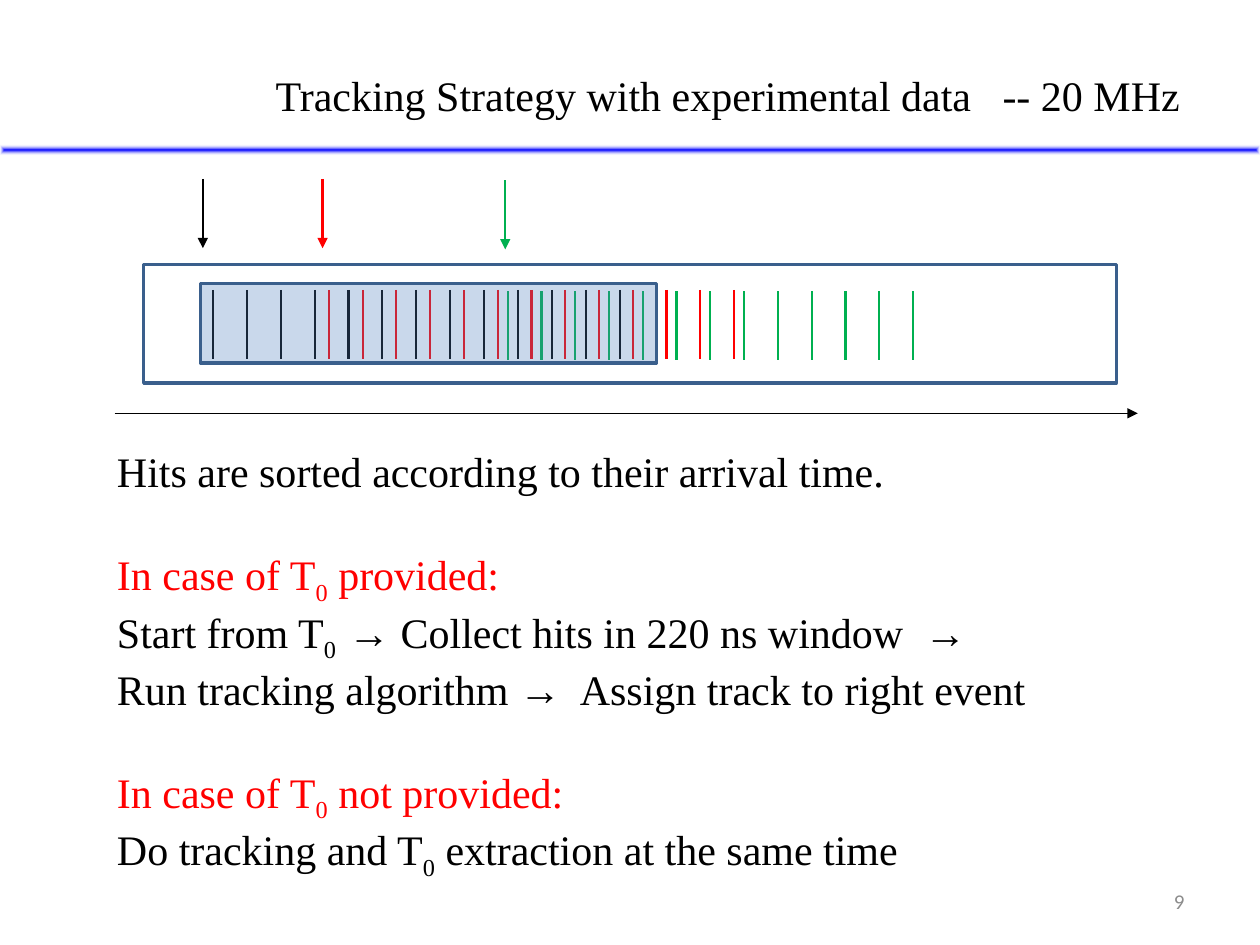
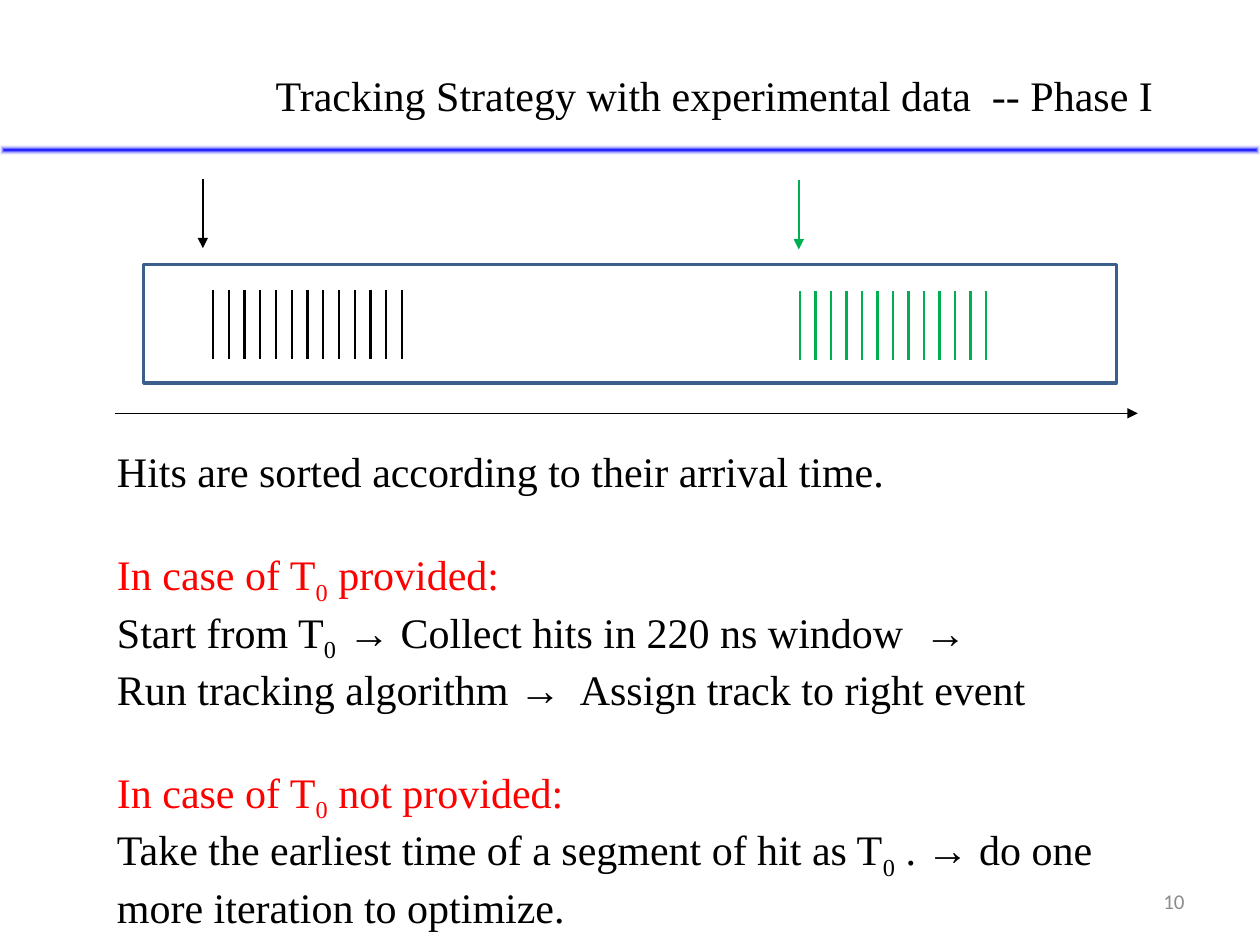
from lxml.etree import SubElement
from pptx import Presentation
from pptx.dml.color import RGBColor
from pptx.enum.shapes import MSO_CONNECTOR, MSO_SHAPE
from pptx.enum.text import MSO_ANCHOR, PP_ALIGN
from pptx.oxml import parse_xml
from pptx.oxml.ns import nsdecls, qn
from pptx.util import Inches, Pt

COLOURS = {
    "black": "000000",
    "red": "FF0000",
    "green": "00B050",
    "frame": "3A5F8C",
    "window": "4F81BD",
    "band": "0000FF",
    "band edge": "FFFFFF",
    "page number": "8C8C8C",
}
SERIF = "Times New Roman"
SANS = "Calibri"

# The slide is a grid of 100 columns by 75 rows.
SLIDE_WIDTH, SLIDE_HEIGHT = Inches(10), Inches(7.5)
COLUMN, ROW = SLIDE_WIDTH / 100, SLIDE_HEIGHT / 75

HITS_PER_EVENT = 13
HIT_LENGTH = 5.5
HIT_TOP, MARKER_TOP = 23, 14.2
BLANK_LINE = 30

STRATEGY = [
    ("Hits are sorted according to their arrival time.", "black", 0),
    ("In case of T|0| provided:", "red", BLANK_LINE),
    ("Start from T|0  |→ Collect hits in 220 ns window  →", "black", 0),
    ("Run tracking algorithm →  Assign track to right event", "black", 0),
    ("In case of T|0| not provided:", "red", BLANK_LINE),
]


def colour(name):
    return RGBColor.from_string(COLOURS[name])


def grid(left, top, width, height):
    return (round(left * COLUMN), round(top * ROW),
            round(width * COLUMN), round(height * ROW))


def add_span(para, text, size, font, ink, subscript=False):
    span = para.add_run()
    span.text = text
    span.font.size = Pt(size)
    span.font.name = font
    span.font.color.rgb = colour(ink)
    if subscript:
        span.font._element.set("baseline", "-25000")


def add_text(page, place, lines, size=24, font=SERIF, align=PP_ALIGN.LEFT,
             anchor=MSO_ANCHOR.TOP):
    """Write (text, colour, space before) lines; |bars| enclose subscripts."""
    frame = page.shapes.add_textbox(*grid(*place)).text_frame
    frame.word_wrap = True
    frame.vertical_anchor = anchor
    for index, (text, ink, space) in enumerate(lines):
        para = frame.add_paragraph() if index else frame.paragraphs[0]
        para.alignment = align
        para.space_before = Pt(space)
        for part, words in enumerate(text.split("|")):
            add_span(para, words, size, font, ink, subscript=part % 2 == 1)


def add_line(shapes, start, end, ink="black", weight=1.25, arrow=False):
    line = shapes.add_connector(MSO_CONNECTOR.STRAIGHT,
                                *grid(*start, *end))
    line.line.color.rgb = colour(ink)
    line.line.width = Pt(weight)
    if arrow:
        SubElement(line.line._get_or_add_ln(), qn("a:tailEnd"), type="triangle")
    SubElement(line._element.spPr, qn("a:effectLst"))


def add_frame(page, place, fill=None, opacity=100):
    box = page.shapes.add_shape(MSO_SHAPE.RECTANGLE, *grid(*place))
    box.shadow.inherit = False
    box.line.color.rgb = colour("frame")
    box.line.width = Pt(2)
    if fill is None:
        box.fill.background()
        return
    box.fill.solid()
    box.fill.fore_color.rgb = colour(fill)
    tint = box._element.spPr.find(".//" + qn("a:srgbClr"))
    SubElement(tint, qn("a:alpha"), val=str(opacity * 1000))


def add_band(page):
    """Draw the rule under the title, blue inside and fading at its edges."""
    band = page.shapes.add_shape(MSO_SHAPE.RECTANGLE, *grid(0, 11.5, 100, 0.8))
    band.shadow.inherit = False
    band.line.fill.background()
    gradient = parse_xml(
        f'<a:gradFill {nsdecls("a")} rotWithShape="1"><a:gsLst>'
        f'<a:gs pos="0"><a:srgbClr val="{COLOURS["band"]}"/></a:gs>'
        f'<a:gs pos="100000"><a:srgbClr val="{COLOURS["band edge"]}">'
        '<a:alpha val="0"/></a:srgbClr></a:gs></a:gsLst>'
        '<a:path path="shape"><a:fillToRect l="50000" t="50000" '
        'r="50000" b="50000"/></a:path></a:gradFill>')
    band._element.spPr.find(qn("a:prstGeom")).addnext(gradient)


def add_event(page, ink, marker, first_hit, pitch, drop=0):
    """Draw the evenly spaced hits of one event and the arrow at its T0."""
    hits = page.shapes.add_group_shape().shapes
    top = HIT_TOP + drop
    for number in range(HITS_PER_EVENT):
        column = first_hit + number * pitch
        add_line(hits, (column, top), (column, top + HIT_LENGTH), ink)
    top = MARKER_TOP + drop
    add_line(page.shapes, (marker, top), (marker, top + HIT_LENGTH), ink,
             arrow=True)


def add_page(deck, number, title, conclusion, events):
    page = deck.slides.add_slide(deck.slide_layouts[6])
    add_text(page, (71.7, 69.5, 23.3, 4), [(str(number), "page number", 0)],
             size=12, font=SANS, align=PP_ALIGN.RIGHT, anchor=MSO_ANCHOR.MIDDLE)
    add_band(page)
    add_text(page, (20.9, 5, 76, 5), [(title, "black", 0)])
    add_line(page.shapes, (9.1, 32.8), (90.3, 32.8), weight=0.75, arrow=True)
    add_text(page, (8.3, 34.9, 85.8, 33.3),
             STRATEGY + [(conclusion, "black", 0)])
    add_frame(page, (11.4, 21, 77.2, 9.4))
    for event in events:
        add_event(page, *event)
    return page


def main():
    deck = Presentation()
    deck.slide_width, deck.slide_height = SLIDE_WIDTH, SLIDE_HEIGHT
    overlapping = add_page(
        deck, 9, "Tracking Strategy with experimental data   -- 20 MHz",
        "Do tracking and T|0| extraction at the same time",
        [("black", 16.1, 16.9, 2.69),
         ("red", 25.6, 26.1, 2.68),
         ("green", 40.1, 40.3, 2.68, 0.1)])
    add_frame(overlapping, (15.9, 22.5, 36.2, 6.3), fill="window", opacity=30)
    add_page(
        deck, 10, "Tracking Strategy with experimental data  -- Phase I",
        "Take the earliest time of a segment of hit as T|0| . → do one more "
        "iteration to optimize.",
        [("black", 16.1, 16.9, 1.25),
         ("green", 63.4, 63.5, 1.23, 0.1)])
    deck.save("out.pptx")


if __name__ == "__main__":
    main()
